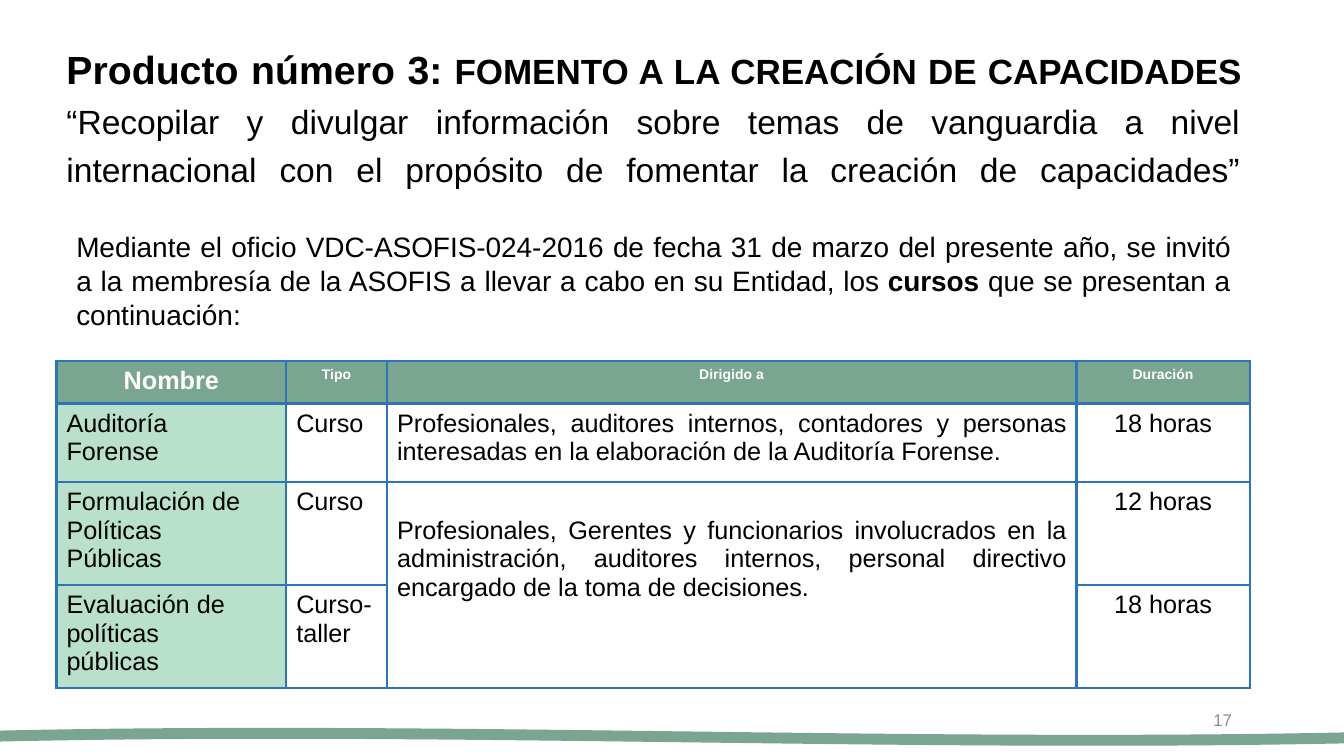
from lxml import etree
from pptx import Presentation
from pptx.dml.color import RGBColor
from pptx.enum.shapes import MSO_SHAPE
from pptx.enum.text import MSO_ANCHOR, PP_ALIGN
from pptx.oxml.ns import qn
from pptx.util import Pt

WAVE = MSO_SHAPE.WAVE
TOP, MIDDLE = MSO_ANCHOR.TOP, MSO_ANCHOR.MIDDLE
LEFT, CENTER, RIGHT, JUSTIFY = (
    PP_ALIGN.LEFT, PP_ALIGN.CENTER, PP_ALIGN.RIGHT, PP_ALIGN.JUSTIFY)

FONT = "Arial"
COLORS = {"text": "000000", "white": "FFFFFF", "green": "79A591",
          "mint": "B8E0CA", "border": "2E75B6", "number": "8C8C8C"}
INSETS = (3.6, 2.16)
COLUMN_WIDTHS = (82.08, 36, 246.24, 61.92)
ROW_HEIGHTS = (14.4, 28.08, 36, 36)
HEADERS = ("Nombre", "Tipo", "Dirigido a", "Duración")
COURSES = (
    ("Auditoría\nForense", "Curso",
     "Profesionales, auditores internos, contadores y personas interesadas "
     "en la elaboración de la Auditoría Forense.", "18 horas"),
    ("Formulación de\nPolíticas\nPúblicas", "Curso",
     "Profesionales, Gerentes y funcionarios involucrados en la administración, "
     "auditores internos, personal directivo encargado de la toma de decisiones.",
     "12 horas"),
    ("Evaluación de\npolíticas\npúblicas", "Curso-taller", "", "18 horas"),
)
COURSE_ALIGNMENTS = (LEFT, LEFT, JUSTIFY, CENTER)


def rgb(name):
    return RGBColor.from_string(COLORS[name])


def style_font(font, size, color="text", bold=False):
    font.name = FONT
    font.size = Pt(size)
    font.bold = bold
    font.color.rgb = rgb(color)


def add_text(slide, box, align, size, color="text", anchor=TOP):
    sp = slide.shapes.add_textbox(*map(Pt, box))
    tf = sp.text_frame
    tf.word_wrap = True
    tf.vertical_anchor = anchor
    p = tf.paragraphs[0]
    p.alignment = align
    style_font(p.font, size, color)
    return tf, p


def add_run(p, text, size, color="text", bold=False):
    r = p.add_run()
    r.text = text
    style_font(r.font, size, color, bold)


def add_title(slide):
    tf, p = add_text(slide, (20.16, 21.6, 426.96, 51.84), JUSTIFY, 12, anchor=MIDDLE)
    tf.margin_left = tf.margin_right = Pt(INSETS[0])
    tf.margin_top = tf.margin_bottom = Pt(INSETS[1])
    p.line_spacing = 1.2
    p.space_before = Pt(5)
    add_run(p, "Producto número 3:", 14, bold=True)
    add_run(p, " FOMENTO A LA CREACIÓN DE CAPACIDADES", 12.5, bold=True)
    p.add_line_break()
    add_run(p, "“Recopilar y divulgar información sobre temas de vanguardia a nivel "
               "internacional con el propósito de fomentar la creación de "
               "capacidades”", 12)
    p.add_line_break()


def add_invitation(slide):
    _, p = add_text(slide, (20.16, 78.48, 426.24, 43.92), JUSTIFY, 10)
    add_run(p, "Mediante el oficio VDC-ASOFIS-024-2016 de fecha 31 de marzo del "
               "presente año, se invitó a la membresía de la ASOFIS a llevar a cabo "
               "en su Entidad, los ", 10)
    add_run(p, "cursos", 10, bold=True)
    add_run(p, " que se presentan a continuación:", 10)


def add_slide_number(slide):
    _, p = add_text(slide, (339.12, 249.84, 108, 14.4), RIGHT, 6, "number", MIDDLE)
    add_run(p, "17", 6, "number")


def add_wave(slide):
    sp = slide.shapes.add_shape(WAVE, Pt(-10.8), Pt(259.92), Pt(508.32), Pt(6.48))
    sp.shadow.inherit = False
    sp.adjustments[0] = 0.2
    sp.adjustments[1] = 0
    sp.fill.solid()
    sp.fill.fore_color.rgb = rgb("green")
    sp.line.fill.background()


def set_borders(cell):
    properties = cell._tc.get_or_add_tcPr()
    for index, side in enumerate(("lnL", "lnR", "lnT", "lnB")):
        line = etree.Element(qn(f"a:{side}"), w=str(Pt(1)))
        fill = etree.SubElement(line, qn("a:solidFill"))
        etree.SubElement(fill, qn("a:srgbClr"), val=COLORS["border"])
        properties.insert(index, line)


def fill_cell(cell, text, align, size=9, color="text", bold=False, fill=None):
    cell.margin_left = cell.margin_right = Pt(INSETS[0])
    cell.margin_top = cell.margin_bottom = Pt(INSETS[1])
    cell.text = text
    for p in cell.text_frame.paragraphs:
        p.alignment = align
        style_font(p.font, size, color, bold)
    if fill:
        cell.fill.solid()
        cell.fill.fore_color.rgb = rgb(fill)
    else:
        cell.fill.background()
    set_borders(cell)


def add_course_table(slide):
    frame = slide.shapes.add_table(
        len(ROW_HEIGHTS), len(COLUMN_WIDTHS), Pt(20.16), Pt(128.88),
        Pt(sum(COLUMN_WIDTHS)), Pt(sum(ROW_HEIGHTS)))
    table = frame.table
    for column, width in zip(table.columns, COLUMN_WIDTHS):
        column.width = Pt(width)
    for row, height in zip(table.rows, ROW_HEIGHTS):
        row.height = Pt(height)
    for j, header in enumerate(HEADERS):
        fill_cell(table.cell(0, j), header, CENTER, 5 if j else 9,
                  "white", True, "green")
    for i, course in enumerate(COURSES, start=1):
        for j, text in enumerate(course):
            fill_cell(table.cell(i, j), text, COURSE_ALIGNMENTS[j],
                      fill=None if j else "mint")
    audience = table.cell(2, 2)
    audience.merge(table.cell(3, 2))
    audience.margin_top = Pt(12.5)


def main():
    prs = Presentation()
    prs.slide_width, prs.slide_height = Pt(480), Pt(270)
    slide = prs.slides.add_slide(prs.slide_layouts[6])
    add_title(slide)
    add_slide_number(slide)
    add_course_table(slide)
    add_invitation(slide)
    add_wave(slide)
    prs.save("out.pptx")


if __name__ == "__main__":
    main()
